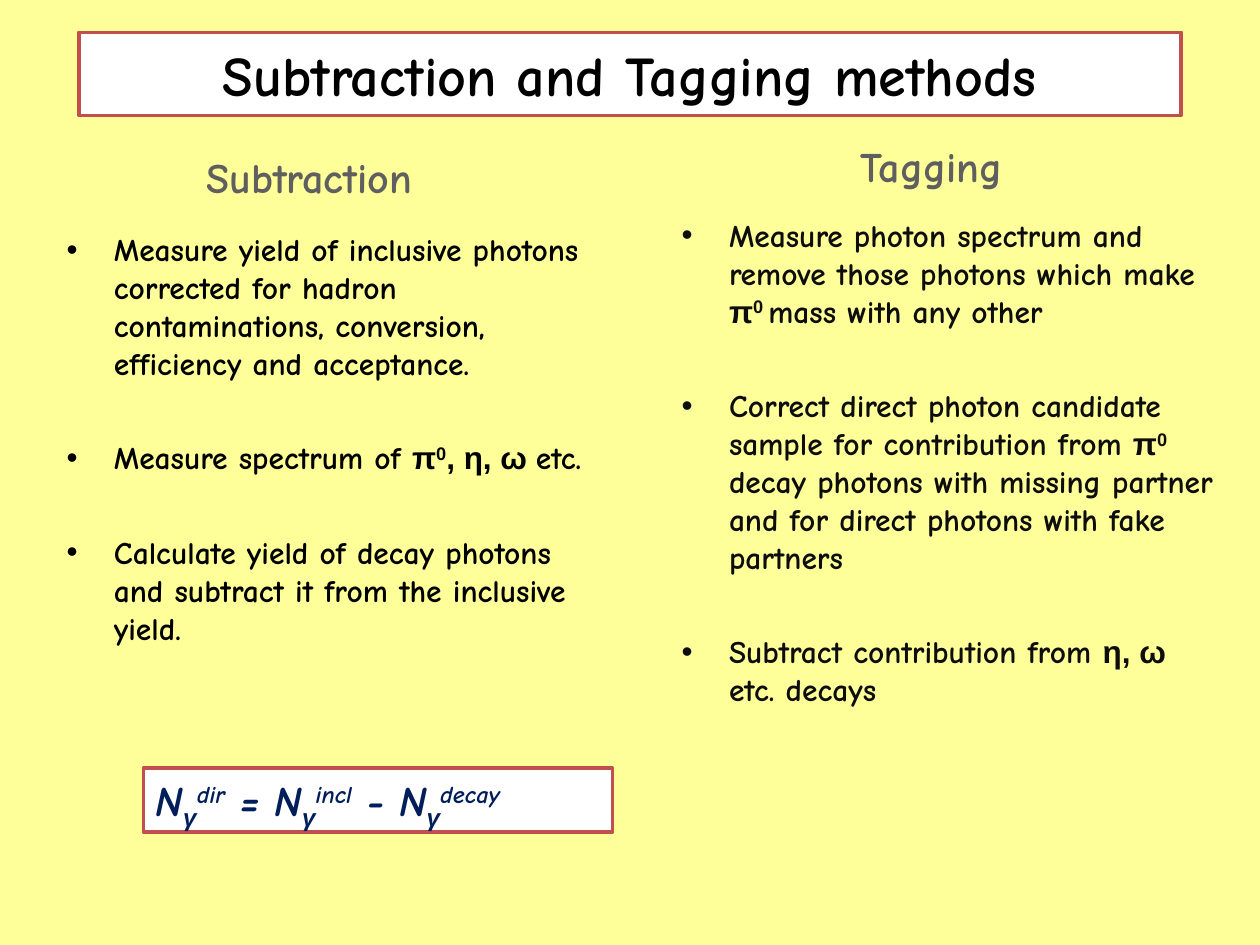
from lxml import etree
from pptx import Presentation
from pptx.dml.color import RGBColor
from pptx.enum import shapes, text
from pptx.oxml import ns
from pptx.util import Pt

COLORS = {"background": "FFFF99", "panel": "FFFFFF", "border": "C0504D", "title": "000000",
          "heading": "5F5F5F", "formula": "001E5A", "subtraction": "000000", "tagging": "0D0D0D"}
BODY_FONT, GREEK_FONT = "Comic Neue", "Arial"
SUPER, SUB = 30000, -25000

SUBTRACTION = [
    [("Measure yield of inclusive photons corrected for hadron contaminations, "
      "conversion, efficiency and acceptance.",)],
    [("Measure spectrum of ",), ("π", GREEK_FONT), ("0", GREEK_FONT, SUPER),
     (", η, ω ", GREEK_FONT), ("etc.",)],
    [("Calculate yield of decay photons and subtract it from the inclusive yield.",)],
]
TAGGING = [
    [("Measure photon spectrum and remove those photons which make ",), ("π", GREEK_FONT),
     ("0 ", GREEK_FONT, SUPER), ("mass with any other",)],
    [("Correct direct photon candidate sample for contribution from ",), ("π", GREEK_FONT),
     ("0", GREEK_FONT, SUPER),
     (" decay photons with missing partner and for direct photons with fake partners",)],
    [("Subtract contribution from ",), ("η, ω", GREEK_FONT), (" etc. decays",)],
]
YIELDS = [("N", "dir"), (" = N", "incl"), (" - N", "decay")]


def rgb(name):
    """Return the named colour."""
    return RGBColor.from_string(COLORS[name])


def write_runs(paragraph, pieces, size, color, italic=False):
    """Add bold runs given as (wording, font, baseline shift)."""
    for wording, font, shift in ((*piece, BODY_FONT, 0)[:3] if len(piece) == 1
                                 else (*piece, 0)[:3] for piece in pieces):
        run = paragraph.add_run()
        run.text = wording
        run.font.name, run.font.size = font, Pt(size)
        run.font.bold, run.font.italic = True, italic
        run.font.color.rgb = rgb(color)
        if shift:
            run.font._element.set("baseline", str(shift))


def add_panel(slide, box, kind):
    """Add a white panel with a red border and return its text frame."""
    panel = slide.shapes.add_shape(kind, *map(Pt, box))
    panel.shadow.inherit = False
    panel.fill.solid()
    panel.fill.fore_color.rgb = rgb("panel")
    panel.line.color.rgb = rgb("border")
    panel.line.width = Pt(2)
    return panel.text_frame


def add_title(slide, box):
    """Place the centred title panel."""
    frame = add_panel(slide, box, shapes.MSO_SHAPE.RECTANGLE)
    frame.vertical_anchor = text.MSO_ANCHOR.MIDDLE
    frame.paragraphs[0].alignment = text.PP_ALIGN.CENTER
    write_runs(frame.paragraphs[0], [("Subtraction and Tagging methods",)], 32, "title")


def add_heading(slide, box, wording):
    """Place the heading of a column."""
    frame = slide.shapes.add_textbox(*map(Pt, box)).text_frame
    write_runs(frame.paragraphs[0], [(wording,)], 24, "heading")


def add_bullets(slide, box, points, color):
    """Place a bulleted column with even gaps between its points."""
    frame = slide.shapes.add_textbox(*map(Pt, box)).text_frame
    frame.word_wrap = True
    for index, pieces in enumerate(points):
        paragraph = frame.add_paragraph() if index else frame.paragraphs[0]
        paragraph.space_before = Pt(32.5 if index else 0)
        properties = paragraph._p.get_or_add_pPr()
        properties.set("marL", str(Pt(27)))
        properties.set("indent", str(-Pt(27)))
        etree.SubElement(properties, ns.qn("a:buFont"), typeface=GREEK_FONT)
        etree.SubElement(properties, ns.qn("a:buChar"), char="•")
        write_runs(paragraph, pieces, 18, color)


def add_formula(slide, box):
    """Place the panel with the yield equation."""
    frame = add_panel(slide, box, shapes.MSO_SHAPE.RECTANGLE)
    frame.vertical_anchor = text.MSO_ANCHOR.TOP
    frame.paragraphs[0].alignment = text.PP_ALIGN.LEFT
    pieces = [piece for symbol, label in YIELDS
              for piece in ((symbol,), ("γ", GREEK_FONT, SUB), (label, BODY_FONT, SUPER))]
    write_runs(frame.paragraphs[0], pieces, 24, "formula", italic=True)


def main():
    """Build the slide and save it."""
    deck = Presentation()
    deck.slide_width, deck.slide_height = Pt(720), Pt(540)
    slide = deck.slides.add_slide(deck.slide_layouts[6])
    slide.background.fill.solid()
    slide.background.fill.fore_color.rgb = rgb("background")
    add_title(slide, (45, 18.5, 630, 47.5))
    add_bullets(slide, (382.5, 120, 318, 356), TAGGING, "tagging")
    add_bullets(slide, (31, 128, 318, 312), SUBTRACTION, "subtraction")
    add_formula(slide, (82, 439, 268, 36.5))
    add_heading(slide, (111, 83, 172, 36.5), "Subtraction")
    add_heading(slide, (484.5, 77, 103, 36.5), "Tagging")
    deck.save("out.pptx")


if __name__ == "__main__":
    main()
